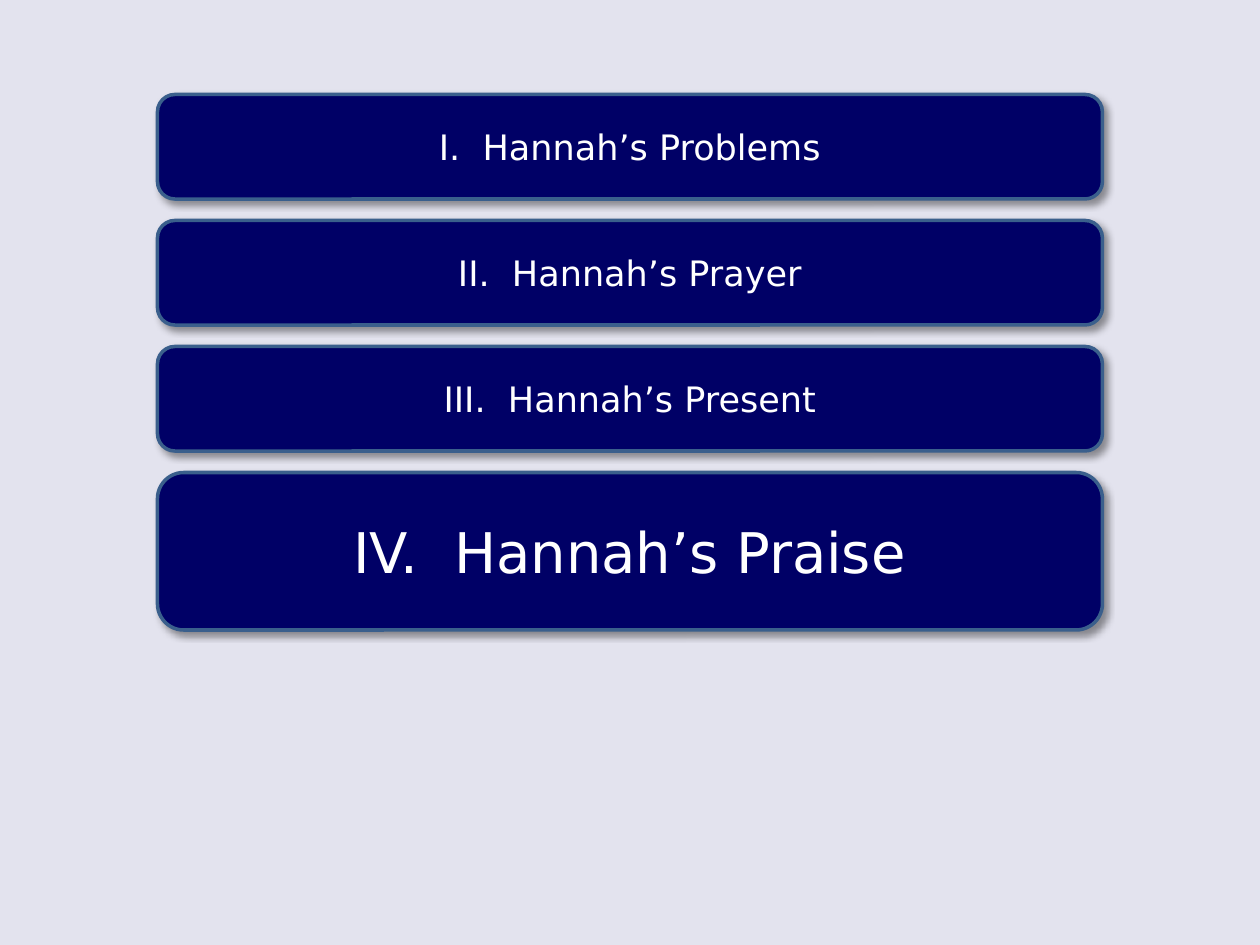
from lxml import etree
from pptx import Presentation
from pptx import util as u
from pptx.dml import color
from pptx.enum import shapes, text
from pptx.oxml import ns

NAVY = "000066"
PALE = "E3E3EE"
EDGE = "3A5F8C"
WHITE = "FFFFFF"
BLACK = "000000"


def rgb(value):
    return color.RGBColor.from_string(value)


class Outline:
    """Style and current slide of the sermon outline."""

    font = "DejaVu Sans"
    left, width = 1.25, 7.5

    def __init__(self, deck):
        self.slide = deck.slides.add_slide(deck.slide_layouts[6])

    def background(self, fill):
        self.slide.background.fill.solid()
        self.slide.background.fill.fore_color.rgb = rgb(fill)

    def shadow(self, box):
        box.shadow.inherit = False
        effects = box._element.spPr.find(ns.qn("a:effectLst"))
        outer = etree.SubElement(
            effects, ns.qn("a:outerShdw"), blurRad=str(u.Pt(4)),
            dist=str(u.Pt(3)), dir=str(45 * 60000), algn="tl", rotWithShape="0")
        tint = etree.SubElement(outer, ns.qn("a:srgbClr"), val=BLACK)
        etree.SubElement(tint, ns.qn("a:alpha"), val="40000")

    def point(self, wording, top, height, size):
        box = self.slide.shapes.add_shape(
            shapes.MSO_SHAPE.ROUNDED_RECTANGLE, u.Inches(self.left),
            u.Inches(top), u.Inches(self.width), u.Inches(height))
        box.fill.solid()
        box.fill.fore_color.rgb = rgb(NAVY)
        box.line.color.rgb = rgb(EDGE)
        box.line.width = u.Pt(2)
        self.shadow(box)

        box.text_frame.vertical_anchor = text.MSO_ANCHOR.MIDDLE
        para = box.text_frame.paragraphs[0]
        para.text = wording
        para.alignment = text.PP_ALIGN.CENTER
        para.font.name = self.font
        para.font.size = u.Pt(size)
        para.font.color.rgb = rgb(WHITE)


def main():
    deck = Presentation()
    deck.slide_width, deck.slide_height = u.Inches(10), u.Inches(7.5)
    outline = Outline(deck)
    outline.background(PALE)

    # Points one inch apart, the current one larger
    points = ["I.  Hannah’s Problems", "II.  Hannah’s Prayer",
              "III.  Hannah’s Present", "IV.  Hannah’s Praise"]
    current = 3
    for index, wording in enumerate(points):
        height, size = (1.25, 32) if index == current else (0.83, 20)
        outline.point(wording, 0.75 + index, height, size)

    deck.save("out.pptx")


if __name__ == "__main__":
    main()
